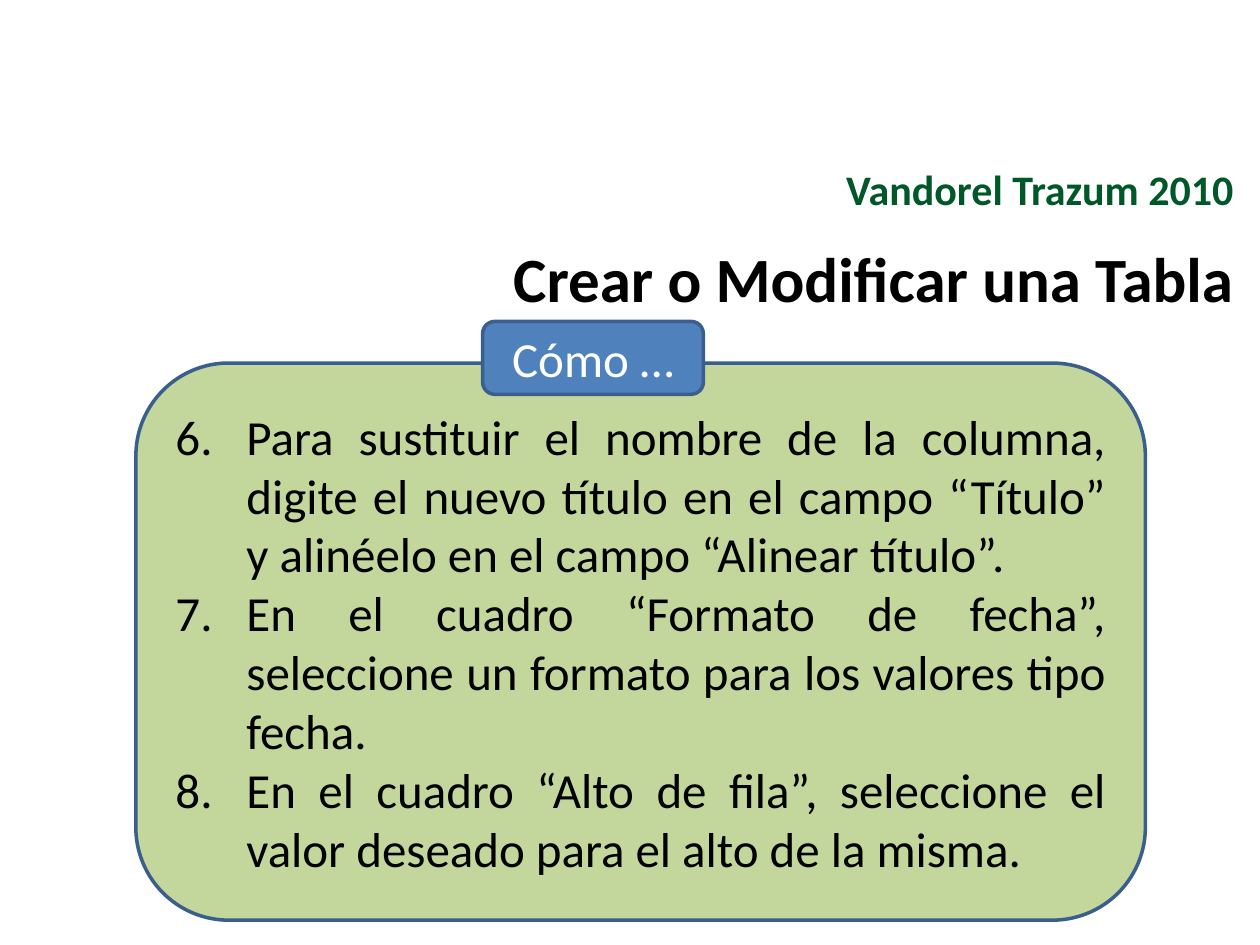
import pptx
import pptx.util
import pptx.dml.color
import pptx.enum.shapes
import pptx.enum.text
import lxml.etree
from pptx.util import Cm, Pt

ALIGN = pptx.enum.text.PP_ALIGN
MIDDLE = pptx.enum.text.MSO_ANCHOR.MIDDLE
EDGE = "3A5F8C"
STEPS = [
    "Para sustituir el nombre de la columna, digite el nuevo título en el "
    "campo “Título” y alinéelo en el campo “Alinear título”.",
    "En el cuadro “Formato de fecha”, seleccione un formato para los "
    "valores tipo fecha.",
    "En el cuadro “Alto de fila”, seleccione el valor deseado para el "
    "alto de la misma.",
]


def color(code):
    return pptx.dml.color.RGBColor.from_string(code)


def number(par, start):
    """Give a paragraph a hanging automatic number."""
    props = par._p.get_or_add_pPr()
    props.set("marL", str(Cm(1.43)))
    props.set("indent", str(-Cm(1.43)))
    tag = pptx.oxml.ns.qn("a:buAutoNum")
    lxml.etree.SubElement(props, tag, type="arabicPeriod", startAt=str(start))


def write(shape, lines, size, code, align, bold=False, start=None):
    """Fill a shape with one paragraph per line."""
    frame = shape.text_frame
    frame.word_wrap = True
    frame.auto_size = pptx.enum.text.MSO_AUTO_SIZE.NONE
    frame.vertical_anchor = MIDDLE
    for i, line in enumerate(lines):
        par = frame.add_paragraph() if i else frame.paragraphs[0]
        if start:
            number(par, start)
        par.alignment = align
        run = par.add_run()
        run.text = line
        run.font.name = "Calibri"
        run.font.size = Pt(size)
        run.font.bold = bold
        run.font.color.rgb = color(code)


def panel(slide, box, fill):
    """Add a rounded, outlined rectangle."""
    kind = pptx.enum.shapes.MSO_SHAPE.ROUNDED_RECTANGLE
    shape = slide.shapes.add_shape(kind, *map(Cm, box))
    shape.shadow.inherit = False
    shape.fill.solid()
    shape.fill.fore_color.rgb = color(fill)
    shape.line.color.rgb = color(EDGE)
    shape.line.width = Pt(2)
    return shape


def main():
    deck = pptx.Presentation()
    deck.slide_width, deck.slide_height = Cm(25.4), Cm(19.05)
    slide = deck.slides.add_slide(deck.slide_layouts[5])

    # Course name and slide title
    head = slide.shapes.add_textbox(Cm(13.69), Cm(2.92), Cm(11.43), Cm(1.75))
    write(head, ["Vandorel Trazum 2010"], 24, "005828", ALIGN.RIGHT, True)
    title = slide.shapes.title
    title.left, title.top = Cm(9.22), Cm(4.7)
    title.width, title.height = Cm(15.9), Cm(1.8)
    write(title, ["Crear o Modificar una Tabla"], 36, "000000",
          ALIGN.RIGHT, True)

    # Numbered steps and their label
    body = panel(slide, (2.74, 7.32, 20.35, 11.23), "C3D69B")
    write(body, STEPS, 28, "000000", ALIGN.JUSTIFY, start=6)
    label = panel(slide, (9.73, 6.48, 4.45, 1.47), "4F81BD")
    write(label, ["Cómo …"], 28, "FFFFFF", ALIGN.CENTER)

    deck.save("out.pptx")


if __name__ == "__main__":
    main()
